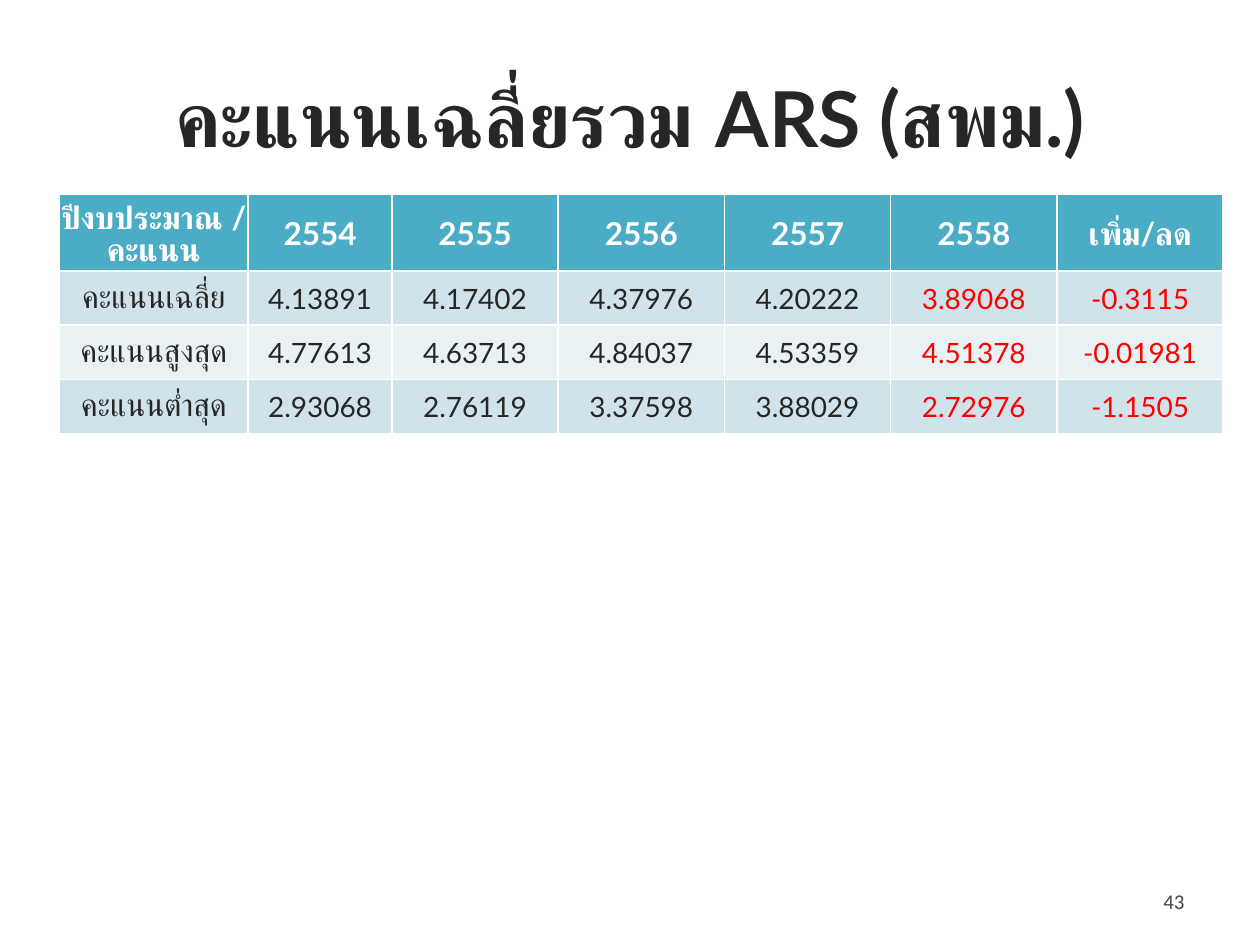
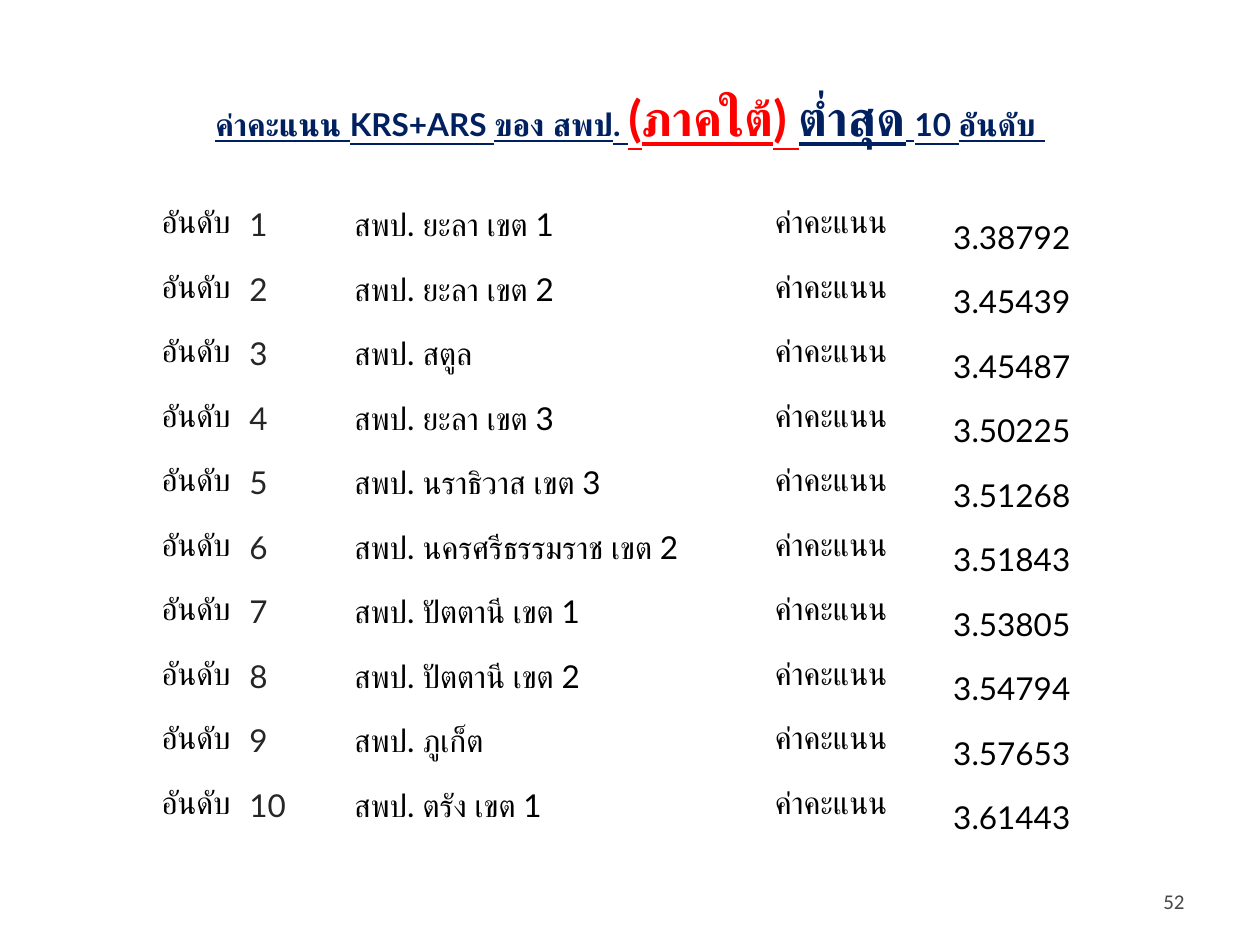
from pptx import Presentation
from pptx.dml.color import RGBColor
from pptx.enum.text import MSO_ANCHOR, PP_ALIGN
from pptx.util import Inches, Pt

LEFT, CENTER, RIGHT = PP_ALIGN.LEFT, PP_ALIGN.CENTER, PP_ALIGN.RIGHT
MIDDLE, BOTTOM = MSO_ANCHOR.MIDDLE, MSO_ANCHOR.BOTTOM

INK, BLACK, WHITE, GREY = "262626", "000000", "FFFFFF", "474747"
RED, NAVY, TEAL = "FF0000", "002060", "4BACC6"
BANDS = ("D0E3EA", "E9F1F5")

TITLE_BOX = (0.5, 0.3, 9, 1.25)
NUMBER_BOX = (7.17, 6.95, 2.33, 0.4)
CELL_MARGINS = {"margin_left": 0.01, "margin_top": 0.01,
                "margin_right": 0.01, "margin_bottom": 0}

YEARLY_HEADINGS = ("ปีงบประมาณ / คะแนน", "2554", "2555", "2556", "2557", "2558", "เพิ่ม/ลด")
YEARLY_SCORES = (
    ("คะแนนเฉลี่ย", "4.13891", "4.17402", "4.37976", "4.20222", "3.89068", "-0.3115"),
    ("คะแนนสูงสุด", "4.77613", "4.63713", "4.84037", "4.53359", "4.51378", "-0.01981"),
    ("คะแนนต่ำสุด", "2.93068", "2.76119", "3.37598", "3.88029", "2.72976", "-1.1505"),
)
FIRST_RED_COLUMN = 5

LOWEST_AREAS = (
    ("ยะลา เขต 1", "3.38792"),
    ("ยะลา เขต 2", "3.45439"),
    ("สตูล", "3.45487"),
    ("ยะลา เขต 3", "3.50225"),
    ("นราธิวาส เขต 3", "3.51268"),
    ("นครศรีธรรมราช เขต 2", "3.51843"),
    ("ปัตตานี เขต 1", "3.53805"),
    ("ปัตตานี เขต 2", "3.54794"),
    ("ภูเก็ต", "3.57653"),
    ("ตรัง เขต 1", "3.61443"),
)
RANK_COLUMNS = (
    (INK, LEFT, MIDDLE),
    (BLACK, LEFT, MIDDLE),
    (BLACK, CENTER, MIDDLE),
    (BLACK, CENTER, BOTTOM),
)


def color(value):
    return RGBColor.from_string(value)


def add_run(paragraph, text, size, ink, bold=False, underline=False, face="Lato"):
    run = paragraph.add_run()
    run.text = text
    formats = {"name": face, "size": Pt(size), "bold": bold, "underline": underline}
    for key, value in formats.items():
        setattr(run.font, key, value)
    run.font.color.rgb = color(ink)


def add_line(slide, box, align):
    frame = slide.shapes.add_textbox(*map(Inches, box)).text_frame
    frame.word_wrap = True
    frame.vertical_anchor = MIDDLE
    frame.paragraphs[0].alignment = align
    return frame.paragraphs[0]


def add_page(deck, number, title_runs):
    slide = deck.slides.add_slide(deck.slide_layouts[6])
    title = add_line(slide, TITLE_BOX, CENTER)
    for text, size, ink, underline in title_runs:
        add_run(title, text, size, ink, True, underline)
    add_run(add_line(slide, NUMBER_BOX, RIGHT), str(number), 12, GREY, face="Calibri")
    return slide


def add_grid(slide, left, top, widths, heights):
    table = slide.shapes.add_table(
        len(heights), len(widths), Inches(left), Inches(top),
        Inches(sum(widths)), Inches(sum(heights))).table
    for column, width in zip(table.columns, widths):
        column.width = Inches(width)
    for row, height in zip(table.rows, heights):
        row.height = Inches(height)
    table.horz_banding = False
    return table


def fill_cell(cell, text, size, ink, fill=None, bold=False, align=CENTER, anchor=MIDDLE):
    for key, value in CELL_MARGINS.items():
        setattr(cell, key, Inches(value))
    cell.vertical_anchor = anchor
    if fill:
        cell.fill.solid()
        cell.fill.fore_color.rgb = color(fill)
    else:
        cell.fill.background()
    paragraph = cell.text_frame.paragraphs[0]
    paragraph.alignment = align
    add_run(paragraph, text, size, ink, bold)


def yearly_scores(slide, left, top):
    table = add_grid(slide, left, top, [1.5, 1.14] + [1.32] * 5, [0.56] + [0.43] * 3)
    for column, heading in enumerate(YEARLY_HEADINGS):
        fill_cell(table.cell(0, column), heading, 18, WHITE, TEAL, True)
    for row, scores in enumerate(YEARLY_SCORES, 1):
        for column, score in enumerate(scores):
            fill_cell(table.cell(row, column), score, 16 if column else 18,
                      RED if column >= FIRST_RED_COLUMN else INK,
                      BANDS[(row - 1) % 2])


def lowest_ranking(slide, left, top):
    table = add_grid(slide, left, top, [0.83, 0.83, 2.98, 1.63, 1.24],
                     [0.512] * len(LOWEST_AREAS))
    table.first_row = False
    for row, (area, score) in enumerate(LOWEST_AREAS):
        fill_cell(table.cell(row, 0), "อันดับ", 18, BLACK)
        texts = (str(row + 1), f"สพป. {area}", "ค่าคะแนน", score)
        for column, (text, (ink, align, anchor)) in enumerate(zip(texts, RANK_COLUMNS), 1):
            fill_cell(table.cell(row, column), text, 18, ink, align=align, anchor=anchor)


def main():
    deck = Presentation()
    deck.slide_width, deck.slide_height = Inches(10), Inches(7.5)
    yearly = add_page(deck, 43, [("คะแนนเฉลี่ยรวม ARS (สพม.)", 44, INK, False)])
    yearly_scores(yearly, 0.47, 1.54)
    ranking = add_page(deck, 52, [
        ("ค่าคะแนน KRS+ARS ของ สพป. ", 18, NAVY, True),
        ("(ภาคใต้) ", 28, RED, True),
        ("ต่ำสุด", 28, NAVY, True),
        (" 10 อันดับ ", 18, NAVY, True),
    ])
    lowest_ranking(ranking, 1.14, 1.52)
    deck.save("out.pptx")


if __name__ == "__main__":
    main()
